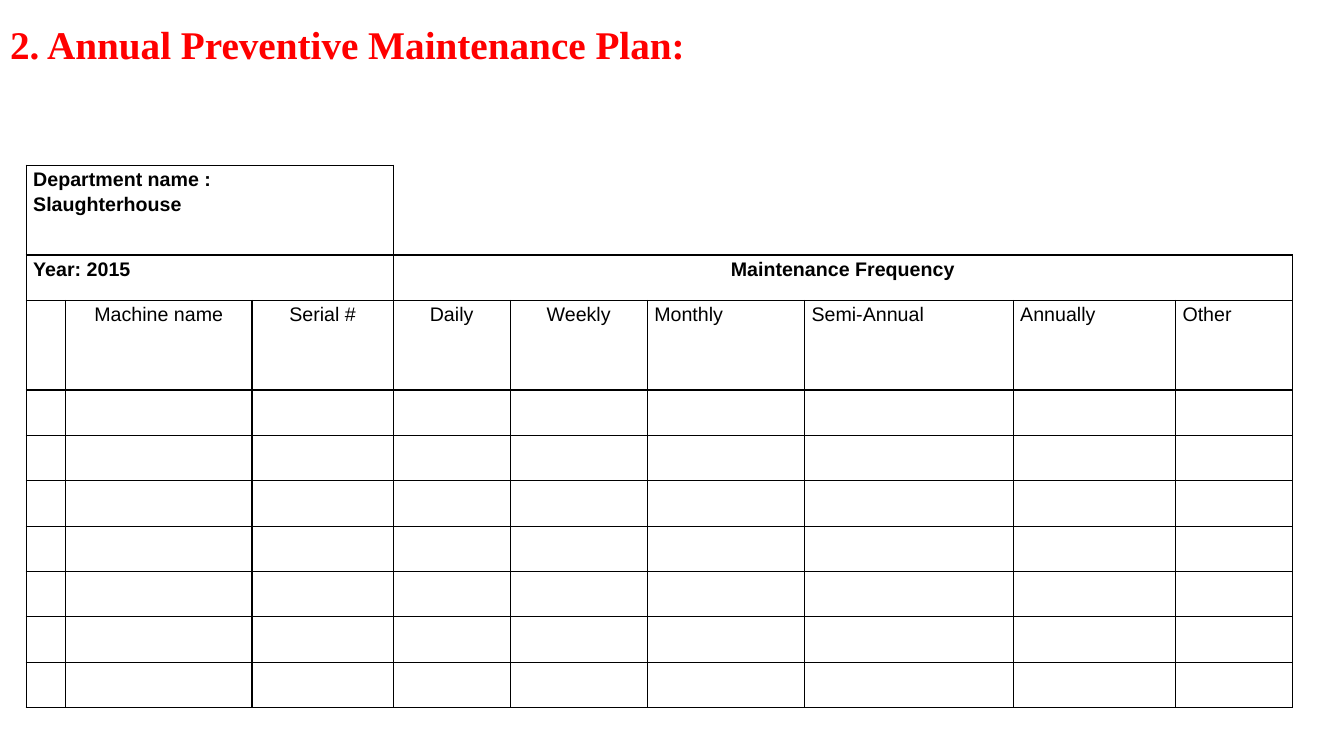
from lxml import etree
from pptx import Presentation, util as u
from pptx.dml.color import RGBColor
from pptx.enum import text
from pptx.oxml.ns import qn

RED = RGBColor(0xFF, 0x00, 0x00)
BLACK = RGBColor(0x00, 0x00, 0x00)
CENTER, JUSTIFY = text.PP_ALIGN.CENTER, text.PP_ALIGN.JUSTIFY

COLUMN_WIDTHS = [0.39, 1.85, 1.4, 1.16, 1.36, 1.56, 2.07, 1.61, 1.16]
ROW_HEIGHTS = [0.89, 0.45, 0.89] + [0.45] * 7
SPANS = [(0, 0, 2), (0, 3, 8), (1, 0, 2), (1, 3, 8)]
CENTERED_HEADINGS = ["Machine name", "Serial #", "Daily", "Weekly"]
JUSTIFIED_HEADINGS = ["Monthly", "Semi-Annual", "Annually", "Other"]


def apply(target, formats):
    for name, value in formats.items():
        setattr(target, name, value)


class PlanSlide:
    title_font = {"name": "Times New Roman", "size": u.Pt(28), "bold": True}
    cell_font = {"name": "Arial", "size": u.Pt(14)}
    cell_format = {
        "margin_left": u.Inches(0.07), "margin_right": u.Inches(0.07),
        "margin_top": 0, "margin_bottom": 0,
    }
    title_frame = {
        "word_wrap": True, "auto_size": text.MSO_AUTO_SIZE.NONE,
        "vertical_anchor": text.MSO_ANCHOR.MIDDLE,
        "margin_bottom": u.Inches(0.45),
    }
    border_width = u.Pt(1)

    def __init__(self, deck):
        self.slide = deck.slides.add_slide(deck.slide_layouts[5])

    def add_wording(self, paragraph, wording, font, color, **layout):
        apply(paragraph, layout)
        run = paragraph.add_run()
        run.text = wording
        apply(run.font, font)
        run.font.color.rgb = color

    def title(self, wording):
        heading = self.slide.shapes.title
        apply(heading, {"left": 0, "top": 0, "width": u.Inches(11.5), "height": u.Inches(1.33)})
        apply(heading.text_frame, self.title_frame)
        self.add_wording(heading.text_frame.paragraphs[0], wording, self.title_font, RED,
                         alignment=text.PP_ALIGN.LEFT, line_spacing=0.9)

    def borders(self, cell, sides):
        properties = cell._tc.get_or_add_tcPr()
        for position, side in enumerate("LRTB"):
            line = etree.Element(qn(f"a:ln{side}"), w=str(self.border_width))
            if side in sides:
                fill = etree.SubElement(line, qn("a:solidFill"))
                etree.SubElement(fill, qn("a:srgbClr"), val=str(BLACK))
            else:
                etree.SubElement(line, qn("a:noFill"))
            properties.insert(position, line)

    def grid(self, left, top, widths, heights, spans):
        frame = self.slide.shapes.add_table(
            len(heights), len(widths), u.Inches(left), u.Inches(top),
            u.Inches(sum(widths)), u.Inches(sum(heights)))
        self.table = frame.table
        apply(self.table, {"first_row": False, "horz_banding": False})
        for column, width in zip(self.table.columns, widths):
            column.width = u.Inches(width)
        for row, height in zip(self.table.rows, heights):
            row.height = u.Inches(height)
        for row, first, last in spans:
            self.table.cell(row, first).merge(self.table.cell(row, last))
        for row in range(len(heights)):
            for column in range(len(widths)):
                cell = self.table.cell(row, column)
                apply(cell, self.cell_format)
                cell.fill.background()
                open_corner = row == 0 and column >= 3
                sides = ("LB" if column == 3 else "B") if open_corner else "LRTB"
                self.borders(cell, sides)

    def fill_cell(self, row, column, lines, alignment, bold=False):
        frame = self.table.cell(row, column).text_frame
        for number, wording in enumerate(lines):
            paragraph = frame.add_paragraph() if number else frame.paragraphs[0]
            self.add_wording(paragraph, wording, {**self.cell_font, "bold": bold}, BLACK,
                             alignment=alignment, line_spacing=1.15)


def main():
    deck = Presentation()
    apply(deck, {"slide_width": u.Inches(13.33), "slide_height": u.Inches(7.5)})
    plan = PlanSlide(deck)
    plan.title("2. Annual Preventive Maintenance Plan:")
    plan.grid(0.26, 1.64, COLUMN_WIDTHS, ROW_HEIGHTS, SPANS)
    plan.fill_cell(0, 0, ["Department name :", "Slaughterhouse"], JUSTIFY, bold=True)
    plan.fill_cell(1, 0, ["Year: 2015"], JUSTIFY, bold=True)
    plan.fill_cell(1, 3, ["Maintenance Frequency"], CENTER, bold=True)
    for column, heading in enumerate(CENTERED_HEADINGS + JUSTIFIED_HEADINGS, start=1):
        alignment = CENTER if heading in CENTERED_HEADINGS else JUSTIFY
        plan.fill_cell(2, column, [heading], alignment)
    deck.save("out.pptx")


if __name__ == "__main__":
    main()
